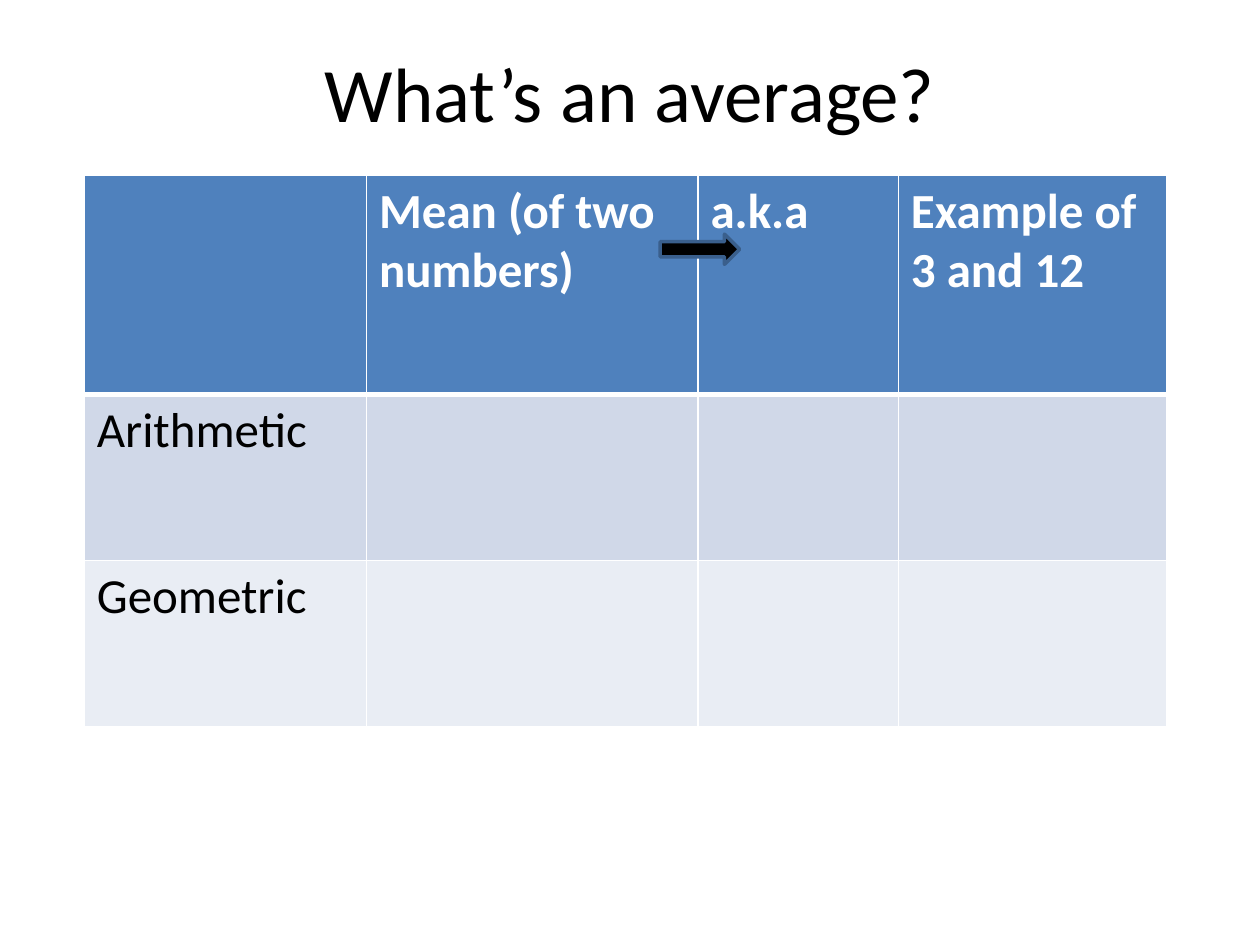
from lxml.etree import SubElement
from pptx import Presentation
from pptx.dml.color import RGBColor
from pptx.enum.shapes import MSO_SHAPE
from pptx.enum.text import MSO_ANCHOR, PP_ALIGN
from pptx.oxml.ns import qn
from pptx.util import Cm, Pt

COLORS = {
    "text": "000000",
    "header_text": "FFFFFF",
    "header": "4F81BD",
    "odd_row": "D0D8E8",
    "even_row": "E9EDF4",
    "border": "FFFFFF",
    "arrow": "000000",
    "arrow_edge": "3A5F8C",
}
TITLE_FONT = {"name": "Calibri", "size": Pt(44), "bold": False}
HEADER_FONT = {"name": "Calibri", "size": Pt(28), "bold": True}
BODY_FONT = {**HEADER_FONT, "bold": False}

COLUMN_WIDTHS = [5.69, 6.68, 4.04, 5.41]
ROW_HEIGHTS = [4.42, 3.35, 3.35]
ROW_FILLS = ["header", "odd_row", "even_row"]
MEANS = [
    ["", "Mean (of two numbers)", "a.k.a", "Example of 3 and 12"],
    ["Arithmetic", "", "", ""],
    ["Geometric", "", "", ""],
]


def rgb(key):
    return RGBColor.from_string(COLORS[key])


def format_font(font, values, color):
    for attribute, value in values.items():
        setattr(font, attribute, value)
    font.color.rgb = rgb(color)


def set_borders(cell, widths):
    """Draw the cell's edges; widths maps L, R, T and B to points."""
    properties = cell._tc.get_or_add_tcPr()
    for side, width in widths.items():
        edge = SubElement(properties, qn(f"a:ln{side}"), w=str(Pt(width)))
        fill = SubElement(edge, qn("a:solidFill"))
        SubElement(fill, qn("a:srgbClr"), val=COLORS["border"])


def add_title(slide, left, top, width, height):
    title = slide.shapes.add_textbox(Cm(left), Cm(top), Cm(width), Cm(height))
    frame = title.text_frame
    frame.word_wrap = True
    frame.vertical_anchor = MSO_ANCHOR.MIDDLE
    paragraph = frame.paragraphs[0]
    paragraph.text = "What’s an average?"
    paragraph.alignment = PP_ALIGN.CENTER
    format_font(paragraph.runs[0].font, TITLE_FONT, "text")


def add_means_table(slide, left, top):
    means = slide.shapes.add_table(
        len(MEANS), len(COLUMN_WIDTHS), Cm(left), Cm(top),
        Cm(sum(COLUMN_WIDTHS)), Cm(sum(ROW_HEIGHTS)),
    ).table
    for column, width in zip(means.columns, COLUMN_WIDTHS):
        column.width = Cm(width)
    for row, height in zip(means.rows, ROW_HEIGHTS):
        row.height = Cm(height)

    for r, words in enumerate(MEANS):
        is_header = r == 0
        for c, word in enumerate(words):
            cell = means.cell(r, c)
            set_borders(cell, {"L": 1, "R": 1, "T": 3 if r == 1 else 1,
                               "B": 3 if is_header else 1})
            cell.fill.solid()
            cell.fill.fore_color.rgb = rgb(ROW_FILLS[r])
            cell.text = word
            format_font(cell.text_frame.paragraphs[0].font,
                        HEADER_FONT if is_header else BODY_FONT,
                        "header_text" if is_header else "text")
            for run in cell.text_frame.paragraphs[0].runs:
                format_font(run.font, HEADER_FONT if is_header else BODY_FONT,
                            "header_text" if is_header else "text")


def add_aka_arrow(slide, left, top, width, height):
    arrow = slide.shapes.add_shape(
        MSO_SHAPE.RIGHT_ARROW, Cm(left), Cm(top), Cm(width), Cm(height))
    arrow.shadow.inherit = False
    arrow.fill.solid()
    arrow.fill.fore_color.rgb = rgb("arrow")
    arrow.line.color.rgb = rgb("arrow_edge")
    arrow.line.width = Pt(2)


def main():
    presentation = Presentation()
    presentation.slide_width = Cm(25.4)
    presentation.slide_height = Cm(19.05)
    slide = presentation.slides.add_slide(presentation.slide_layouts[6])
    add_title(slide, 1.27, 0.76, 22.86, 2.16)
    add_means_table(slide, 1.7, 3.53)
    add_aka_arrow(slide, 13.31, 4.72, 1.6, 0.61)
    presentation.save("out.pptx")


if __name__ == "__main__":
    main()
